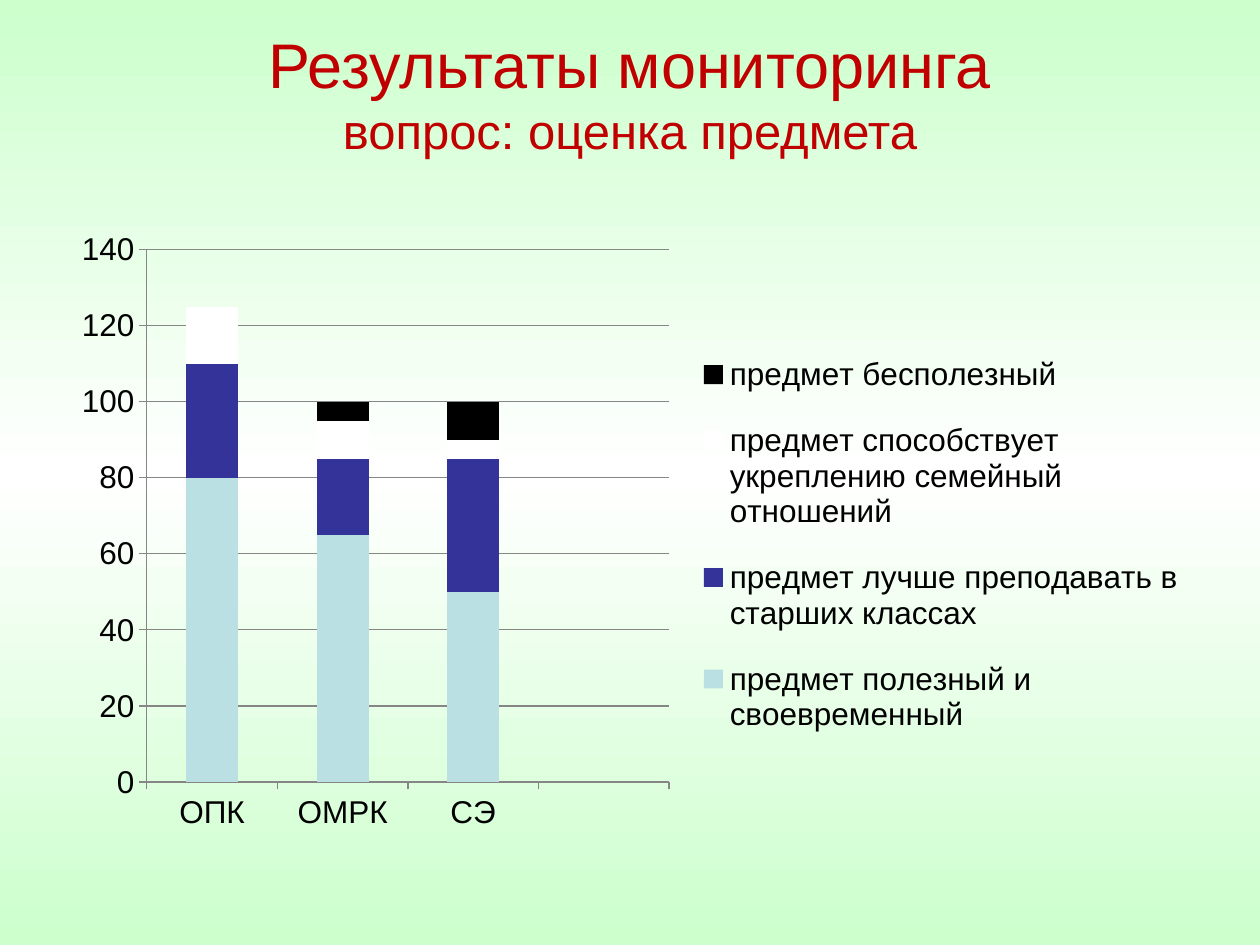
from lxml.etree import SubElement
from copy import deepcopy
from pptx import Presentation
from pptx.chart.data import CategoryChartData
from pptx.dml.color import RGBColor
from pptx.enum.chart import XL_CHART_TYPE, XL_LEGEND_POSITION, XL_TICK_MARK
from pptx.enum.text import MSO_ANCHOR, PP_ALIGN
from pptx.oxml.ns import qn
from pptx.util import Inches, Pt


def paint(fill, color):
    fill.solid()
    fill.fore_color.rgb = RGBColor.from_string(color)


def place(part, index, **shares):
    for old in part.findall(qn("c:layout")):
        part.remove(old)
    layout = SubElement(part, qn("c:layout"))
    part.insert(index, layout)
    manual = SubElement(layout, qn("c:manualLayout"))
    if index == 0:
        SubElement(manual, qn("c:layoutTarget"), val="inner")
    for mode in ("xMode", "yMode"):
        SubElement(manual, qn(f"c:{mode}"), val="edge")
    for side, share in shares.items():
        SubElement(manual, qn(f"c:{side}"), val=str(share))


deck = Presentation()
deck.slide_width, deck.slide_height = Inches(10), Inches(7.5)
W, H = deck.slide_width, deck.slide_height
slide = deck.slides.add_slide(deck.slide_layouts[6])

backdrop = slide.background.fill
backdrop.gradient()
backdrop.gradient_angle = 90
stop_list = next(slide.element.iter(qn("a:gsLst")))
stop_list.insert(1, deepcopy(stop_list[0]))
for stop, color, position in zip(backdrop.gradient_stops, ("CCFFCC", "FFFFFF", "CCFFCC"), (0, 0.5, 1)):
    stop.color.rgb = RGBColor.from_string(color)
    stop.position = position

heading = slide.shapes.add_textbox(int(W * 0.05), int(H * 0.04), int(W * 0.9), int(H * 0.116)).text_frame
heading.word_wrap = True
heading.vertical_anchor = MSO_ANCHOR.MIDDLE
headline = heading.paragraphs[0]
headline.alignment = PP_ALIGN.CENTER
headline.font.name = "Arial"
headline.font.size = Pt(36)
headline.font.color.rgb = RGBColor.from_string("C00000")
headline.add_run().text = "Результаты мониторинга"
headline.add_line_break()
question = headline.add_run()
question.text = "вопрос: оценка предмета"
question.font.size = Pt(28)

answers = [
    ("предмет полезный и своевременный", (80, 65, 50, None), "BBE0E3"),
    ("предмет лучше преподавать в старших классах", (30, 20, 35, None), "333399"),
    ("предмет способствует укреплению семейный отношений", (15, 10, 5, None), "FFFFFF"),
    ("предмет бесполезный", (0, 5, 10, None), "000000"),
]
survey = CategoryChartData()
survey.categories = ["ОПК", "ОМРК", "СЭ", ""]
for answer, shares, color in answers:
    survey.add_series(answer, shares)
chart = slide.shapes.add_chart(
    XL_CHART_TYPE.COLUMN_STACKED, int(W * 0.047), int(H * 0.233), int(W * 0.903), int(H * 0.66), survey
).chart
chart.has_title = False
chart.font.name = "Arial"
chart.font.size = Pt(18)
chart.font.color.rgb = RGBColor.from_string("000000")

columns = chart.plots[0]
columns.gap_width = 150
columns.overlap = 100
columns.vary_by_categories = False
for series, (answer, shares, color) in zip(columns.series, answers):
    paint(series.format.fill, color)

scale = chart.value_axis
scale.minimum_scale, scale.maximum_scale, scale.major_unit = 0, 140, 20
scale.has_major_gridlines = True
for axis in (chart.category_axis, scale):
    axis.major_tick_mark = XL_TICK_MARK.OUTSIDE
    axis.minor_tick_mark = XL_TICK_MARK.NONE
for ruled in (chart.category_axis, scale, scale.major_gridlines):
    paint(ruled.format.line.fill, "868686")
    ruled.format.line.width = Pt(0.75)

chart.has_legend = True
chart.legend.position = XL_LEGEND_POSITION.RIGHT
chart.legend.include_in_layout = False
plot_area = next(chart.element.iter(qn("c:plotArea")))
legend_area = next(chart.element.iter(qn("c:legend")))
place(plot_area, 0, x=0.077, y=0.047, w=0.459, h=0.854)
place(legend_area, 1, x=0.56, y=0.17, w=0.43, h=0.7)

deck.save("out.pptx")
